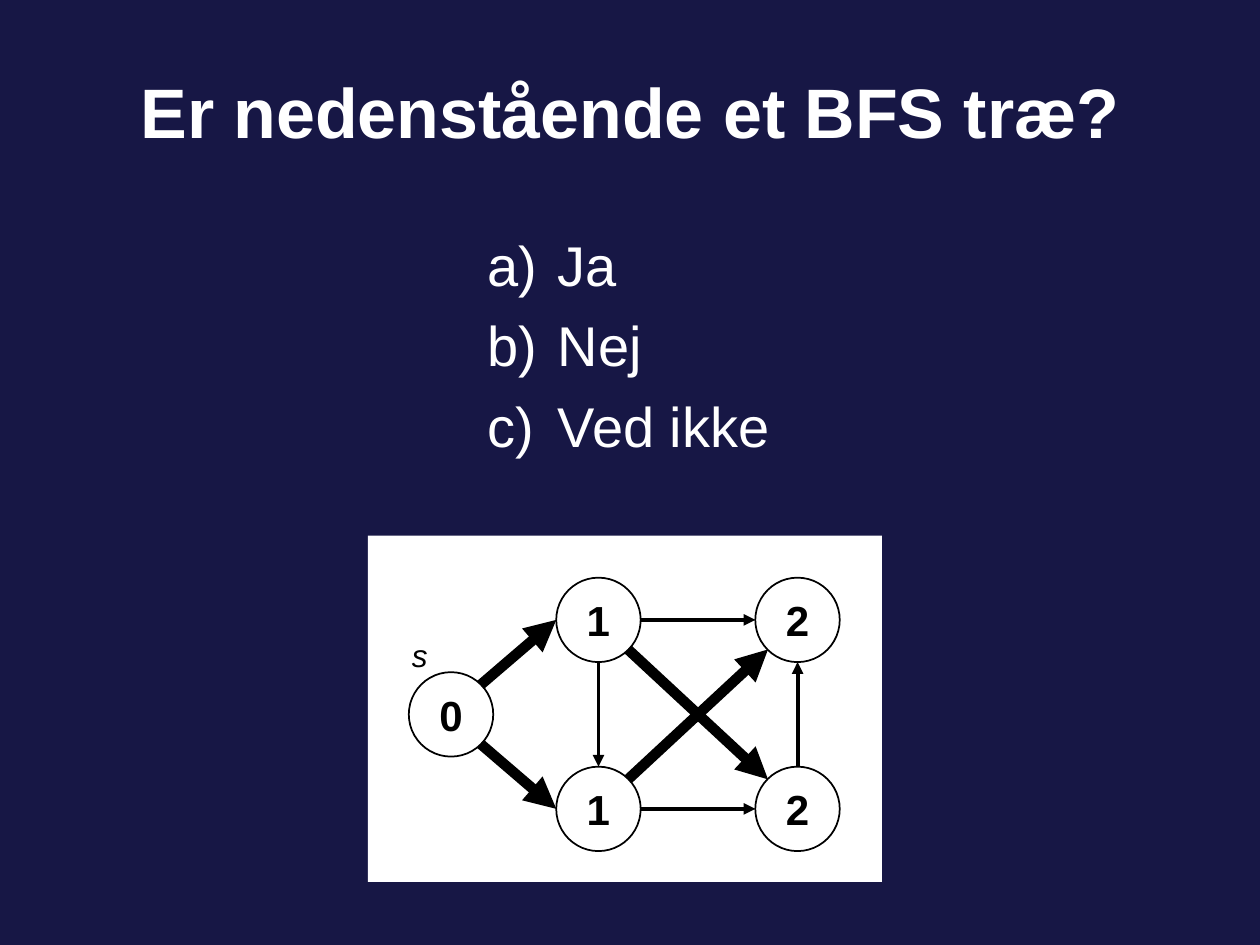
from typing import NamedTuple

from lxml import etree
from pptx import Presentation
from pptx.dml.color import RGBColor
from pptx.enum import shapes, text
from pptx.oxml.ns import qn
from pptx.util import Inches, Pt

NAVY = RGBColor(0x17, 0x17, 0x45)
WHITE = RGBColor(0xFF, 0xFF, 0xFF)
BLACK = RGBColor(0, 0, 0)
FONT = "Arial"

RADIUS = 0.335
DIAGONAL = 0.7
THIN, THICK = 2.25, 6

# Directions from a node's centre to its rim
PORTS = {
    "N": (0, -1), "S": (0, 1), "W": (-1, 0), "E": (1, 0),
    "NE": (DIAGONAL, -DIAGONAL), "SE": (DIAGONAL, DIAGONAL),
    "NW": (-DIAGONAL, -DIAGONAL), "SW": (-DIAGONAL, DIAGONAL),
}


class Node(NamedTuple):
    label: str
    x: float
    y: float

    def port(self, side: str) -> tuple[float, float]:
        dx, dy = PORTS[side]
        return self.x + RADIUS * dx, self.y + RADIUS * dy


class Edge(NamedTuple):
    start: Node
    start_side: str
    end: Node
    end_side: str
    weight: float


TOP, MIDDLE, BOTTOM = 4.92, 5.67, 6.42
SOURCE = Node("0", 3.58, MIDDLE)
UPPER_ONE, LOWER_ONE = (Node("1", 4.75, y) for y in (TOP, BOTTOM))
UPPER_TWO, LOWER_TWO = (Node("2", 6.33, y) for y in (TOP, BOTTOM))
NODES = [SOURCE, UPPER_ONE, LOWER_ONE, UPPER_TWO, LOWER_TWO]

EDGES = [
    Edge(SOURCE, "NE", UPPER_ONE, "W", THICK),
    Edge(SOURCE, "SE", LOWER_ONE, "W", THICK),
    Edge(UPPER_ONE, "E", UPPER_TWO, "W", THIN),
    Edge(LOWER_ONE, "E", LOWER_TWO, "W", THIN),
    Edge(LOWER_ONE, "NE", UPPER_TWO, "SW", THICK),
    Edge(LOWER_TWO, "N", UPPER_TWO, "S", THIN),
    Edge(UPPER_ONE, "SE", LOWER_TWO, "NW", THICK),
    Edge(UPPER_ONE, "S", LOWER_ONE, "N", THIN),
]


def style(para, size: float, color: RGBColor, bold=False, italic=False) -> None:
    for span in para.runs:
        span.font.name = FONT
        span.font.size = Pt(size)
        span.font.color.rgb = color
        span.font.bold = bold
        span.font.italic = italic


def add_title(page, wording: str) -> None:
    title = page.shapes.title
    title.left, title.top = Inches(0), Inches(0.17)
    title.width, title.height = Inches(10), Inches(1.42)
    title.text_frame.text = wording
    title.text_frame.vertical_anchor = text.MSO_ANCHOR.MIDDLE
    para = title.text_frame.paragraphs[0]
    para.alignment = text.PP_ALIGN.CENTER
    style(para, 40, WHITE, bold=True)


def add_answers(page, answers: list[str]) -> None:
    box = page.shapes.add_textbox(Inches(3.77), Inches(1.78), Inches(2.73), Inches(2.08))
    frame = box.text_frame
    frame.word_wrap = True
    frame.text = "\n".join(answers)
    for para in frame.paragraphs:
        para.space_before = Pt(7.5)
        style(para, 32, WHITE)
        properties = para._p.get_or_add_pPr()
        properties.set("marL", str(Inches(0.56)))
        properties.set("indent", str(-Inches(0.56)))
        numbering = etree.SubElement(properties, qn("a:buAutoNum"))
        numbering.set("type", "alphaLcParenR")


def add_panel(page) -> None:
    panel = page.shapes.add_shape(
        shapes.MSO_SHAPE.RECTANGLE, Inches(2.92), Inches(4.25), Inches(4.08), Inches(2.75))
    panel.shadow.inherit = False
    panel.fill.solid()
    panel.fill.fore_color.rgb = WHITE
    panel.line.fill.background()


def add_node(page, node: Node) -> None:
    circle = page.shapes.add_shape(
        shapes.MSO_SHAPE.OVAL, Inches(node.x - RADIUS), Inches(node.y - RADIUS),
        Inches(2 * RADIUS), Inches(2 * RADIUS))
    circle.shadow.inherit = False
    circle.fill.solid()
    circle.fill.fore_color.rgb = WHITE
    circle.line.color.rgb = BLACK
    circle.line.width = Pt(1)
    frame = circle.text_frame
    frame.word_wrap = False
    frame.vertical_anchor = text.MSO_ANCHOR.MIDDLE
    frame.text = node.label
    para = frame.paragraphs[0]
    para.alignment = text.PP_ALIGN.CENTER
    style(para, 24, BLACK, bold=True)


def add_edge(page, edge: Edge) -> None:
    ends = edge.start.port(edge.start_side) + edge.end.port(edge.end_side)
    arrow = page.shapes.add_connector(
        shapes.MSO_CONNECTOR.STRAIGHT, *(Inches(value) for value in ends))
    arrow.line.color.rgb = BLACK
    arrow.line.width = Pt(edge.weight)
    head = etree.SubElement(arrow.line._get_or_add_ln(), qn("a:tailEnd"))
    head.set("type", "triangle")
    etree.SubElement(arrow._element.spPr, qn("a:effectLst"))


def add_source_label(page) -> None:
    box = page.shapes.add_textbox(Inches(3.17), Inches(5), Inches(0.5), Inches(0.4))
    box.text_frame.word_wrap = True
    box.text_frame.text = "s"
    style(box.text_frame.paragraphs[0], 18, BLACK, italic=True)


def main() -> None:
    deck = Presentation()
    deck.slide_width, deck.slide_height = Inches(10), Inches(7.5)
    page = deck.slides.add_slide(deck.slide_layouts[5])
    page.background.fill.solid()
    page.background.fill.fore_color.rgb = NAVY

    # Question and answers
    add_title(page, "Er nedenstående et BFS træ?")
    add_answers(page, ["Ja", "Nej", "Ved ikke"])

    # Graph, with the tree edges drawn thick
    add_panel(page)
    for node in NODES:
        add_node(page, node)
    for edge in EDGES:
        add_edge(page, edge)
    add_source_label(page)

    deck.save("out.pptx")


if __name__ == "__main__":
    main()
